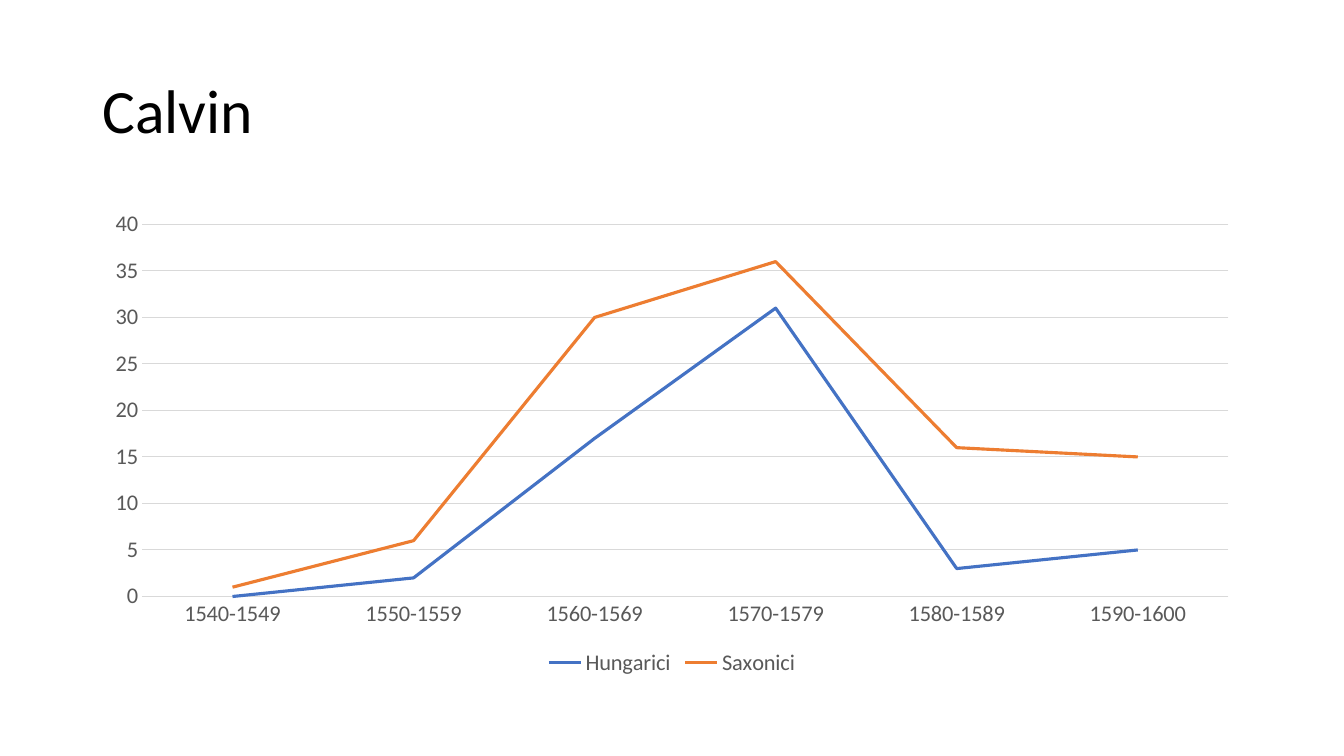
from dataclasses import dataclass

from pptx import Presentation
from pptx import util as u
from pptx.chart import data as chart_data
from pptx.dml import color
from pptx.enum import chart as charts, text


@dataclass(frozen=True)
class Theme:
    font: str = "Calibri"
    title_size: int = 44
    label_size: int = 16
    title: str = "000000"
    label: str = "595959"
    grid: str = "D9D9D9"
    series: tuple = ("4472C4", "ED7D31")
    grid_width: float = 0.75
    series_width: float = 2.25


THEME = Theme()
LEFT, WIDTH = u.Cm(2.33), u.Cm(29.21)
PERIODS = ("1540-1549", "1550-1559", "1560-1569", "1570-1579", "1580-1589", "1590-1600")
COUNTS = {
    "Hungarici": (0, 2, 17, 31, 3, 5),
    "Saxonici": (1, 4, 13, 5, 13, 10),
}


def style_font(font, size, rgb):
    font.name = THEME.font
    font.size = u.Pt(size)
    font.color.rgb = color.RGBColor.from_string(rgb)


def style_line(line, width, rgb):
    line.width = u.Pt(width)
    line.color.rgb = color.RGBColor.from_string(rgb)


def style_axis(axis):
    axis.major_tick_mark = charts.XL_TICK_MARK.NONE
    axis.minor_tick_mark = charts.XL_TICK_MARK.NONE
    style_font(axis.tick_labels.font, THEME.label_size, THEME.label)


def add_title(page, wording):
    box = page.shapes.add_textbox(LEFT, u.Cm(1.01), WIDTH, u.Cm(3.68))
    frame = box.text_frame
    frame.word_wrap = True
    frame.vertical_anchor = text.MSO_ANCHOR.MIDDLE
    para = frame.paragraphs[0]
    para.line_spacing = 0.9
    span = para.add_run()
    span.text = wording
    style_font(span.font, THEME.title_size, THEME.title)


def add_line_chart(page, categories, counts):
    values = chart_data.CategoryChartData(number_format="General")
    values.categories = categories
    for name, numbers in counts.items():
        values.add_series(name, numbers)
    chart = page.shapes.add_chart(
        charts.XL_CHART_TYPE.LINE_STACKED, LEFT, u.Cm(5.07), WIDTH, u.Cm(12.09), values
    ).chart
    chart.has_title = False
    style_font(chart.font, THEME.label_size, THEME.title)

    style_axis(chart.category_axis)
    style_line(chart.category_axis.format.line, THEME.grid_width, THEME.grid)
    scale = chart.value_axis
    style_axis(scale)
    scale.minimum_scale, scale.maximum_scale, scale.major_unit = 0, 40, 5
    scale.format.line.fill.background()
    scale.has_major_gridlines = True
    style_line(scale.major_gridlines.format.line, THEME.grid_width, THEME.grid)

    chart.has_legend = True
    chart.legend.position = charts.XL_LEGEND_POSITION.BOTTOM
    chart.legend.include_in_layout = False
    style_font(chart.legend.font, THEME.label_size, THEME.label)

    plot = chart.plots[0]
    plot.vary_by_categories = False
    for series, rgb in zip(plot.series, THEME.series):
        series.smooth = False
        series.marker.style = charts.XL_MARKER_STYLE.NONE
        style_line(series.format.line, THEME.series_width, rgb)


def main():
    deck = Presentation()
    deck.slide_width, deck.slide_height = u.Cm(33.87), u.Cm(19.05)
    page = deck.slides.add_slide(deck.slide_layouts[6])
    add_title(page, "Calvin")
    add_line_chart(page, PERIODS, COUNTS)
    deck.save("out.pptx")


if __name__ == "__main__":
    main()
